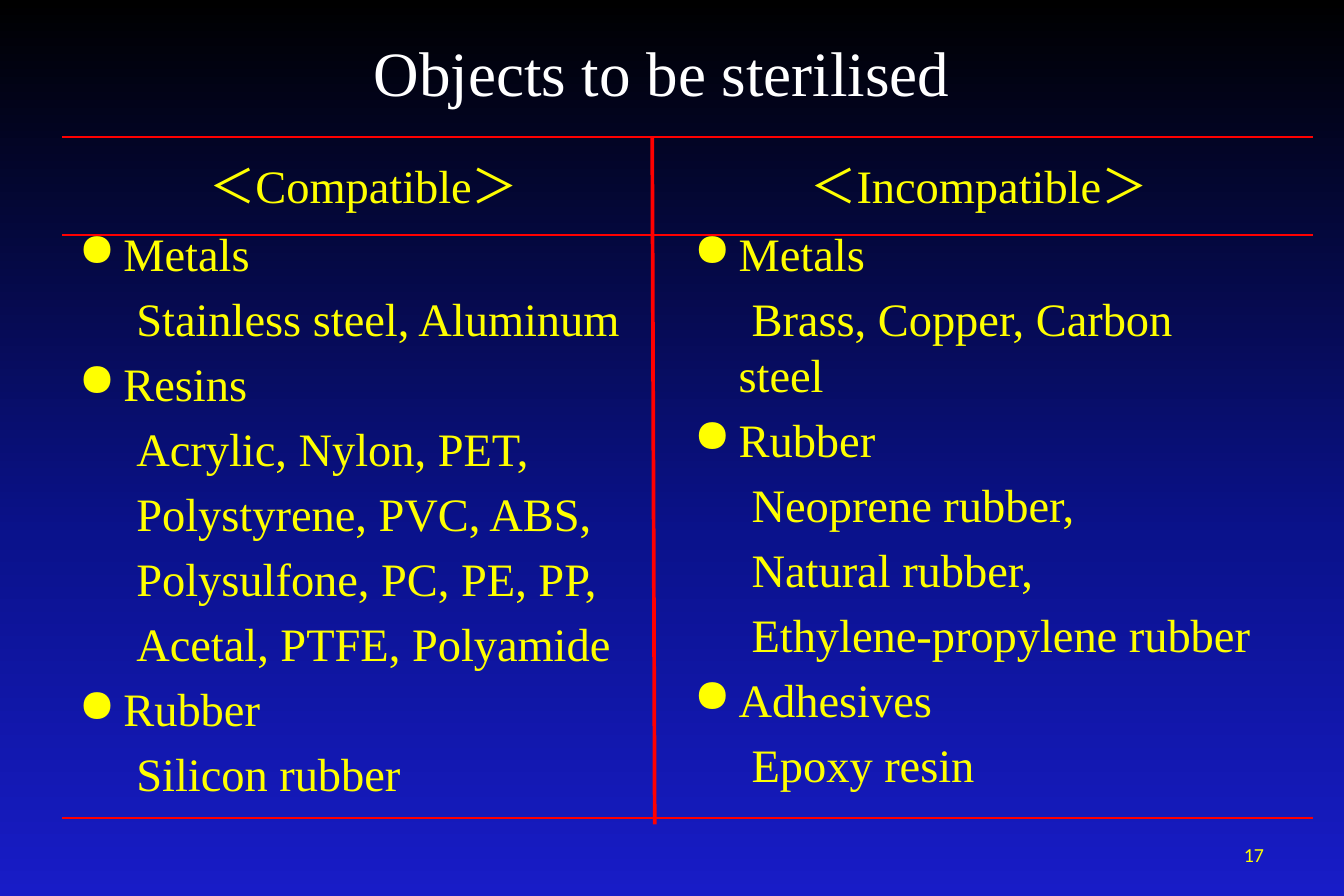
from copy import deepcopy

from lxml.etree import SubElement
from pptx import Presentation
from pptx.dml.color import RGBColor
from pptx.enum.shapes import MSO_CONNECTOR
from pptx.enum.text import MSO_ANCHOR, PP_ALIGN
from pptx.oxml.ns import qn
from pptx.util import Pt

COLORS = {
    "title": "FFFFFF", "text": "FFFF00", "rule": "FF0000",
    "top": "000000", "middle": "0A128C", "bottom": "181CC7",
}
SERIF = "Times New Roman"
COLUMN_WIDTH = 357.8
COLUMNS = [
    (40.3, "＜Compatible＞", [
        ("Metals", ["Stainless steel, Aluminum"]),
        ("Resins", ["Acrylic, Nylon, PET,", "Polystyrene, PVC, ABS,",
                    "Polysulfone, PC, PE, PP,", "Acetal, PTFE, Polyamide"]),
        ("Rubber", ["Silicon rubber"]),
    ]),
    (411.1, "＜Incompatible＞", [
        ("Metals", ["Brass, Copper, Carbon steel"]),
        ("Rubber", ["Neoprene rubber,", "Natural rubber,",
                    "Ethylene-propylene rubber"]),
        ("Adhesives", ["Epoxy resin"]),
    ]),
]
LEFT, RIGHT = 37.4, 791.3
RULE_HEIGHTS = [82.8, 141.8, 493.2]


def color(name):
    return RGBColor.from_string(COLORS[name])


def paint_background(slide):
    fill = slide.background.fill
    fill.gradient()
    fill.gradient_angle = 270
    stop_list = next(slide.element.iter(qn("a:gsLst")))
    stop_list.append(deepcopy(stop_list[-1]))
    stops = zip(fill.gradient_stops, ("top", "middle", "bottom"), (0, 0.6, 1))
    for stop, name, position in stops:
        stop.color.rgb = color(name)
        stop.position = position


def add_frame(slide, left, top, width, height, anchor):
    frame = slide.shapes.add_textbox(Pt(left), Pt(top), Pt(width), Pt(height)).text_frame
    frame.word_wrap = True
    frame.vertical_anchor = anchor
    return frame


def style(paragraph, text, size=28, name="text", font=SERIF, align=PP_ALIGN.LEFT):
    paragraph.text = text
    paragraph.alignment = align
    paragraph.font.size = Pt(size)
    paragraph.font.name = font
    paragraph.font.color.rgb = color(name)


def add_label(slide, box, text, anchor=MSO_ANCHOR.MIDDLE, **look):
    style(add_frame(slide, *box, anchor).paragraphs[0], text, **look)


def indent(paragraph, first_line, bullet=None):
    properties = paragraph._p.get_or_add_pPr()
    properties.set("marL", str(Pt(27)))
    properties.set("indent", str(Pt(first_line)))
    if bullet:
        SubElement(properties, qn("a:buChar")).set("char", bullet)
    else:
        SubElement(properties, qn("a:buNone"))


def add_materials(slide, left, groups):
    frame = add_frame(slide, left, 131.8, COLUMN_WIDTH, 359.3, MSO_ANCHOR.TOP)
    lines = []
    for material, examples in groups:
        lines.append((material, -27, "●"))
        lines += [(example, 7.8, None) for example in examples]
    for number, (text, first_line, bullet) in enumerate(lines):
        paragraph = frame.add_paragraph() if number else frame.paragraphs[0]
        style(paragraph, text)
        paragraph.line_spacing = Pt(33.7)
        paragraph.space_before = Pt(5.5)
        indent(paragraph, first_line, bullet)


def add_rule(slide, start, end, weight):
    rule = slide.shapes.add_connector(
        MSO_CONNECTOR.STRAIGHT, *(Pt(length) for length in (*start, *end)))
    rule.line.color.rgb = color("rule")
    rule.line.width = Pt(weight)
    SubElement(rule._element.spPr, qn("a:effectLst"))


def main():
    """Build the slide on compatible and incompatible materials."""
    deck = Presentation()
    deck.slide_width, deck.slide_height = Pt(810), Pt(540)
    slide = deck.slides.add_slide(deck.slide_layouts[6])
    paint_background(slide)
    add_label(slide, (34.6, -2.2, 728.6, 90), "Objects to be sterilised",
              size=38, name="title", align=PP_ALIGN.CENTER)
    for left, heading, groups in COLUMNS:
        add_label(slide, (left, 81.4, COLUMN_WIDTH, 50.4), heading,
                  anchor=MSO_ANCHOR.BOTTOM, align=PP_ALIGN.CENTER)
        add_materials(slide, left, groups)
    for height in RULE_HEIGHTS:
        add_rule(slide, (LEFT, height), (RIGHT, height), 1.25)
    add_rule(slide, (393.1, 82.8), (394.6, 496.8), 2.25)
    add_label(slide, (580.3, 500.4, 188.6, 28.8), "17",
              size=12, font="Calibri", align=PP_ALIGN.RIGHT)
    deck.save("out.pptx")


if __name__ == "__main__":
    main()
